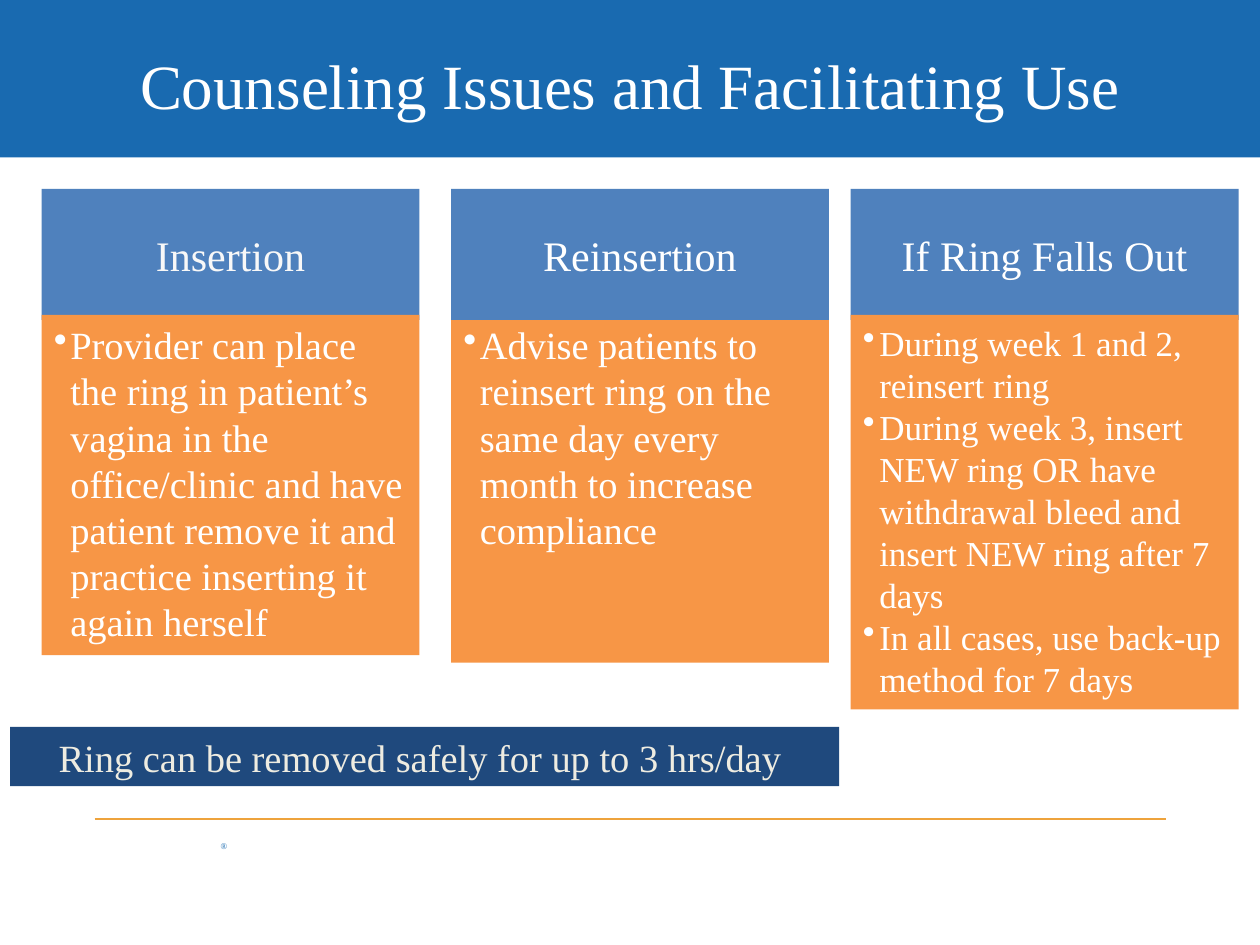
from lxml.etree import SubElement
from pptx import Presentation
from pptx.dml.color import RGBColor
from pptx.enum.shapes import MSO_CONNECTOR, MSO_SHAPE
from pptx.enum.text import MSO_ANCHOR, PP_ALIGN
from pptx.oxml.ns import qn
from pptx.util import Inches, Pt

FONT = "Times New Roman"
COLORS = {
    "banner": "196AB0", "header": "4F81BD", "body": "F79646", "note": "1F497D",
    "rule": "EEA33C", "white": "FFFFFF", "soft": "F8F8F8", "cream": "EEECE1",
}

TITLE = "Counseling Issues and Facilitating Use"
NOTE = "Ring can be removed safely for up to 3 hrs/day "
# The first body is tall enough for all seven lines of its text
COLUMNS = [
    {"head": "Insertion", "head_color": "soft", "left": 0.33, "width": 3,
     "body_height": 2.7, "size": 22, "head_on_top": False,
     "points": ["Provider can place the ring in patient’s vagina in the office/clinic "
                "and have patient remove it and practice inserting it again herself"]},
    {"head": "Reinsertion", "head_color": "white", "left": 3.58, "width": 3,
     "body_height": 2.76, "size": 22, "head_on_top": True,
     "points": ["Advise patients to reinsert ring on the same day every month "
                "to increase compliance"]},
    {"head": "If Ring Falls Out", "head_color": "white", "left": 6.75, "width": 3.08,
     "body_height": 3.13, "size": 20, "head_on_top": False,
     "points": ["During week 1 and 2, reinsert ring",
                "During week 3, insert NEW ring OR have withdrawal bleed and "
                "insert NEW ring after 7 days",
                "In all cases, use back-up method for 7 days"]},
]
HEAD_TOP, HEAD_HEIGHT, BODY_TOP = 1.5, 1.04, 2.5
BULLET_INDENT, BULLET_LEADING = 0.13, 1.2


def rgb(name):
    return RGBColor.from_string(COLORS[name])


def add_block(page, left, top, width, height, color):
    block = page.shapes.add_shape(MSO_SHAPE.RECTANGLE, Inches(left), Inches(top),
                                  Inches(width), Inches(height))
    block.shadow.inherit = False
    block.fill.solid()
    block.fill.fore_color.rgb = rgb(color)
    block.line.fill.background()
    return block


def write(box, lines, size, color, align=PP_ALIGN.CENTER, anchor=MSO_ANCHOR.MIDDLE,
          bullet=False):
    frame = box.text_frame
    frame.word_wrap = True
    frame.vertical_anchor = anchor
    for index, line in enumerate(lines):
        para = frame.paragraphs[0] if index == 0 else frame.add_paragraph()
        para.alignment = align
        if bullet:
            para.line_spacing = Pt(size * BULLET_LEADING)
            props = para._p.get_or_add_pPr()
            props.set("marL", str(Inches(BULLET_INDENT)))
            props.set("indent", str(-Inches(BULLET_INDENT)))
            SubElement(props, qn("a:buChar")).set("char", "•")
        span = para.add_run()
        span.text = line
        span.font.name = FONT
        span.font.size = Pt(size)
        span.font.color.rgb = rgb(color)


def add_column(page, column):
    left, width = column["left"], column["width"]

    def add_head():
        head = add_block(page, left, HEAD_TOP, width, HEAD_HEIGHT, "header")
        write(head, [column["head"]], 24, column["head_color"])

    def add_body():
        body = add_block(page, left, BODY_TOP, width, column["body_height"], "body")
        write(body, column["points"], column["size"], "white", align=PP_ALIGN.LEFT,
              anchor=MSO_ANCHOR.TOP, bullet=True)

    parts = [add_head, add_body]
    for add_part in reversed(parts) if column["head_on_top"] else parts:
        add_part()


def main():
    deck = Presentation()
    deck.slide_width, deck.slide_height = Inches(10), Inches(7.5)
    page = deck.slides.add_slide(deck.slide_layouts[5])
    title = page.shapes.title

    # Banner, registered mark and footer rule
    add_block(page, 0, 0, 10, 1.25, "banner")
    mark = page.shapes.add_textbox(Inches(1.75), Inches(6.67), Inches(0.25), Inches(0.08))
    frame = mark.text_frame
    frame.margin_left = frame.margin_right = frame.margin_top = frame.margin_bottom = 0
    write(mark, ["®"], 5, "banner", align=PP_ALIGN.LEFT, anchor=MSO_ANCHOR.TOP)
    rule = page.shapes.add_connector(MSO_CONNECTOR.STRAIGHT, Inches(0.75), Inches(6.5),
                                     Inches(9.25), Inches(6.5))
    rule.line.color.rgb = rgb("rule")
    rule.line.width = Pt(0.75)
    SubElement(rule._element.spPr, qn("a:effectLst"))

    # Title, moved in front of the banner
    page.shapes._spTree.append(title._element)
    title.left, title.top = Inches(0.5), Inches(0.17)
    title.width, title.height = Inches(9), Inches(1)
    write(title, [TITLE], 36, "white")

    # Three advice columns and the closing note
    for column in COLUMNS:
        add_column(page, column)
    write(add_block(page, 0.08, 5.77, 6.58, 0.47, "note"), [NOTE], 22, "cream")

    deck.save("out.pptx")


if __name__ == "__main__":
    main()
